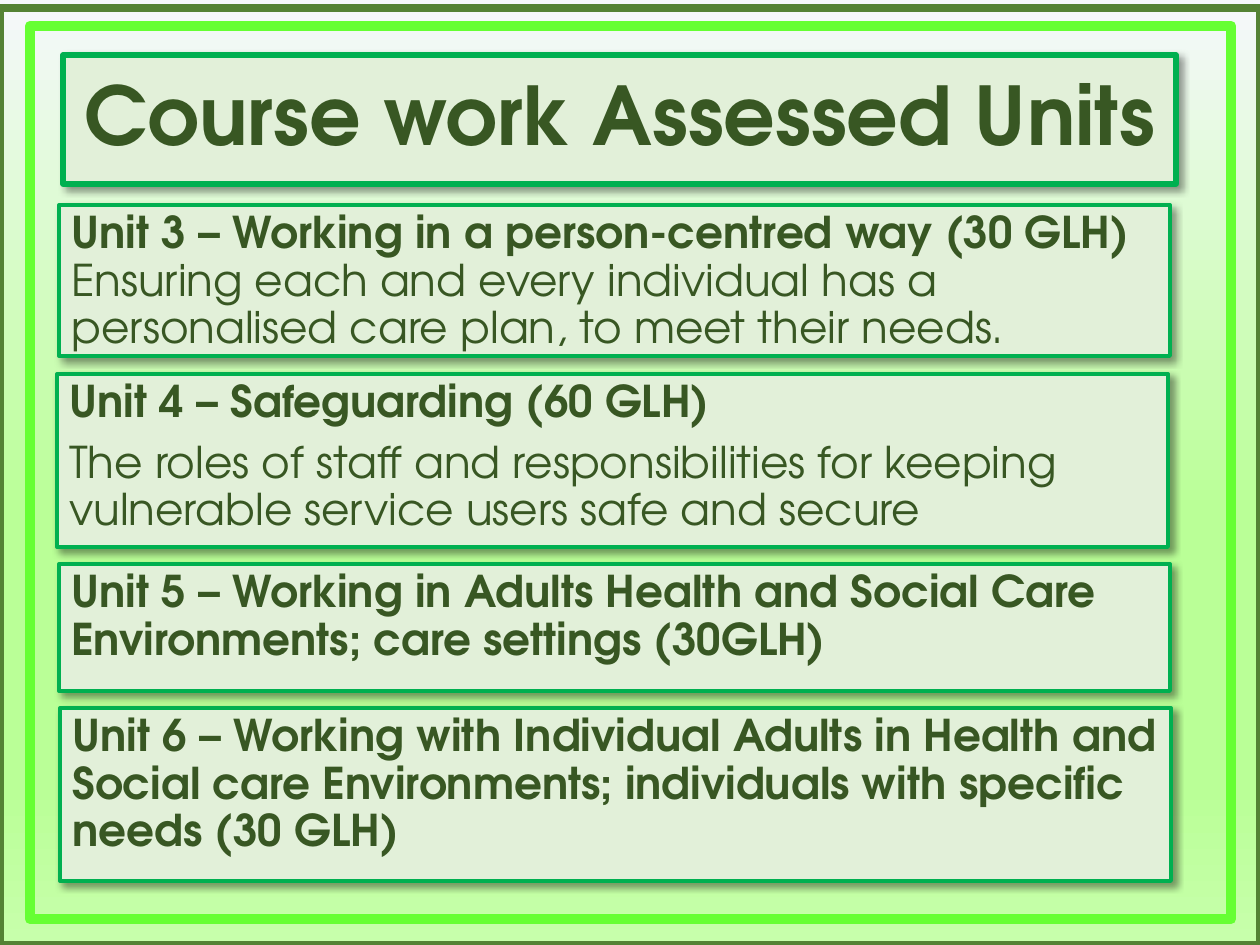
from lxml import etree
from pptx import Presentation
from pptx.dml.color import RGBColor
from pptx.enum.shapes import MSO_SHAPE
from pptx.enum.text import MSO_ANCHOR, PP_ALIGN
from pptx.oxml import parse_xml
from pptx.oxml.ns import nsdecls, qn
from pptx.util import Emu, Pt

PX = 914400 / 126
FONT = "TeX Gyre Adventor"
COLORS = {
    "frame": "548235",
    "neon": "66FF33",
    "panel": "E2F0D9",
    "border": "00B050",
    "text": "385723",
    "shadow": "000000",
}
GRADIENT = [(0, "F6F8FC"), (54, "BAFF97"), (83, "BAFF97"), (100, "C7FFAB")]


def add_box(left, top, width, height, line, weight, fill=None):
    """Outlined rectangle; a filled one also casts a soft shadow."""
    box = [Emu(round(v * PX)) for v in (left, top, width, height)]
    sp = s.shapes.add_shape(MSO_SHAPE.RECTANGLE, *box)
    sp.shadow.inherit = False
    sp.line.color.rgb = RGBColor.from_string(COLORS[line])
    sp.line.width = Pt(weight)
    etree.SubElement(sp.line._get_or_add_ln(), qn("a:round"))
    if fill is None:
        sp.fill.background()
        return sp
    sp.fill.solid()
    sp.fill.fore_color.rgb = RGBColor.from_string(COLORS[fill])
    sp._element.spPr.find(qn("a:effectLst")).append(parse_xml(
        f'<a:outerShdw {nsdecls("a")} blurRad="{Pt(4)}" dist="{Pt(3)}" '
        f'dir="2700000" algn="tl" rotWithShape="0">'
        f'<a:srgbClr val="{COLORS["shadow"]}"><a:alpha val="40000"/></a:srgbClr>'
        f'</a:outerShdw>'))
    sp.text_frame.word_wrap = True
    return sp


def add_run(p, text, size, bold):
    r = p.add_run()
    r.text = text
    r.font.name = FONT
    r.font.size = Pt(size)
    r.font.bold = bold
    r.font.color.rgb = RGBColor.from_string(COLORS["text"])


prs = Presentation()
prs.slide_width = Emu(round(1260 * PX))
prs.slide_height = Emu(round(945 * PX))
s = prs.slides.add_slide(prs.slide_layouts[6])

# Background gradient, top to bottom
fill = s.background.fill
fill.gradient()
fill.gradient_angle = 270
stops = s._element.cSld.find(".//" + qn("a:gsLst"))
for stop in list(stops):
    stops.remove(stop)
for pos, color in GRADIENT:
    stops.append(parse_xml(
        f'<a:gs {nsdecls("a")} pos="{pos * 1000}"><a:srgbClr val="{color}"/></a:gs>'))

# Frames
add_box(0, 8, 1260, 937, "frame", 4.5)
add_box(30, 26, 1201, 893, "neon", 6)

# Title
sp = add_box(63, 55, 1113, 129, "border", 3, "panel")
tf = sp.text_frame
tf.vertical_anchor = MSO_ANCHOR.MIDDLE
p = tf.paragraphs[0]
p.alignment = PP_ALIGN.CENTER
p.line_spacing = 0.9
add_run(p, "Course work Assessed Units", 46.2, True)

# Units: left, top, height, paragraphs of (text, bold) runs
units = [
    (59, 205, 151, [[
        ("Unit 3 – Working in a person-centred way (30 GLH) ", True),
        ("Ensuring each and every individual has a personalised care plan, "
         "to meet their needs.", False)]]),
    (57, 374, 173, [
        [("Unit 4 – Safeguarding (60 GLH)", True)],
        [("The roles of staff and responsibilities for keeping vulnerable "
          "service users safe and secure", False)]]),
    (59, 564, 127, [[
        ("Unit 5 – Working in Adults Health and Social Care Environments; "
         "care settings (30GLH)", True)]]),
    (60, 708, 173, [[
        ("Unit 6 – Working with Individual Adults in Health and Social care "
         "Environments; individuals with specific needs (30 GLH)", True)]]),
]
for left, top, height, paragraphs in units:
    sp = add_box(left, top, 1111, height, "border", 2.25, "panel")
    tf = sp.text_frame
    tf.vertical_anchor = MSO_ANCHOR.TOP
    for i, runs in enumerate(paragraphs):
        p = tf.add_paragraph() if i else tf.paragraphs[0]
        p.alignment = PP_ALIGN.LEFT
        p.line_spacing = 0.9
        p.space_before = Pt(7.5 if i else 0)
        for text, bold in runs:
            add_run(p, text, 25, bold)

prs.save("out.pptx")
